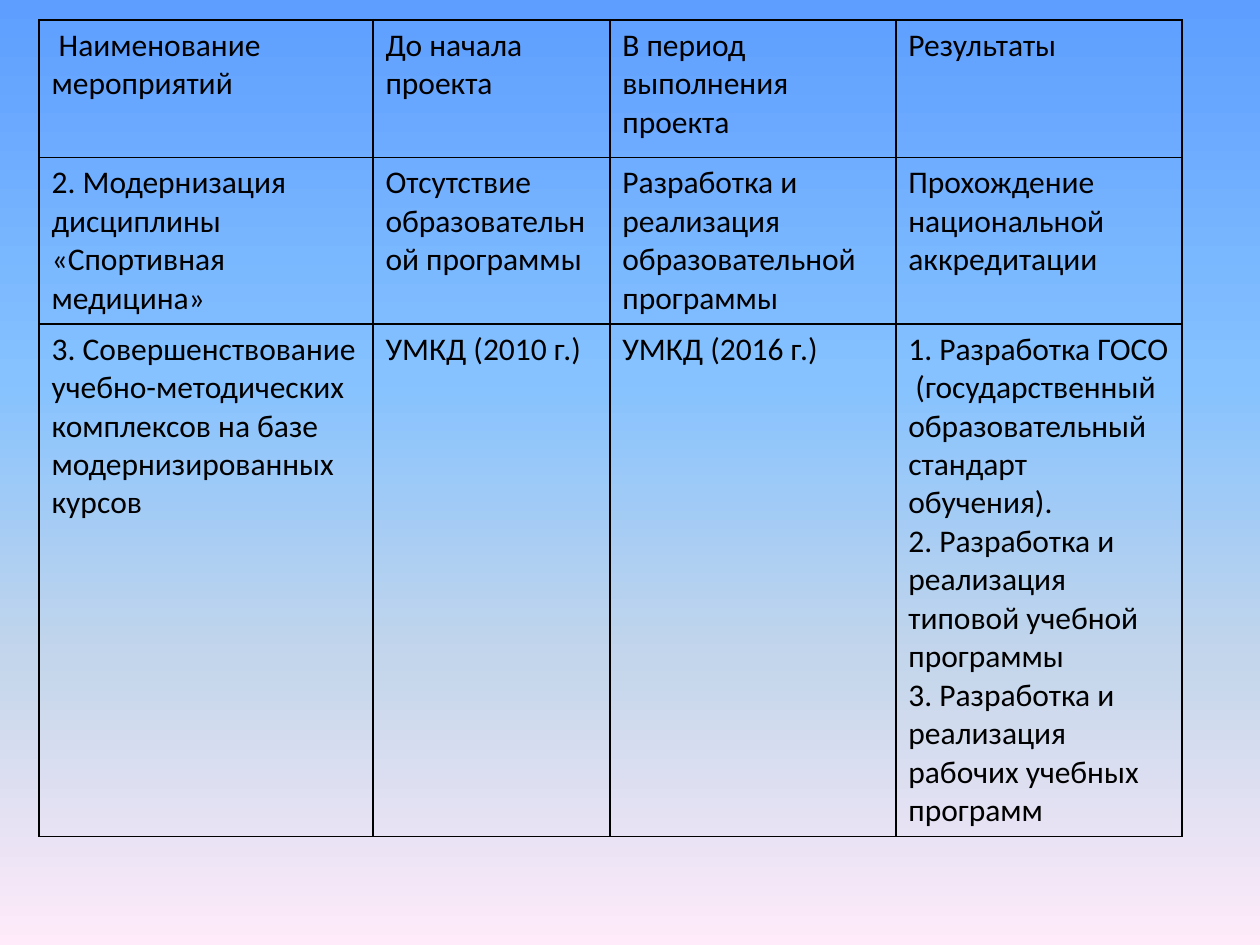
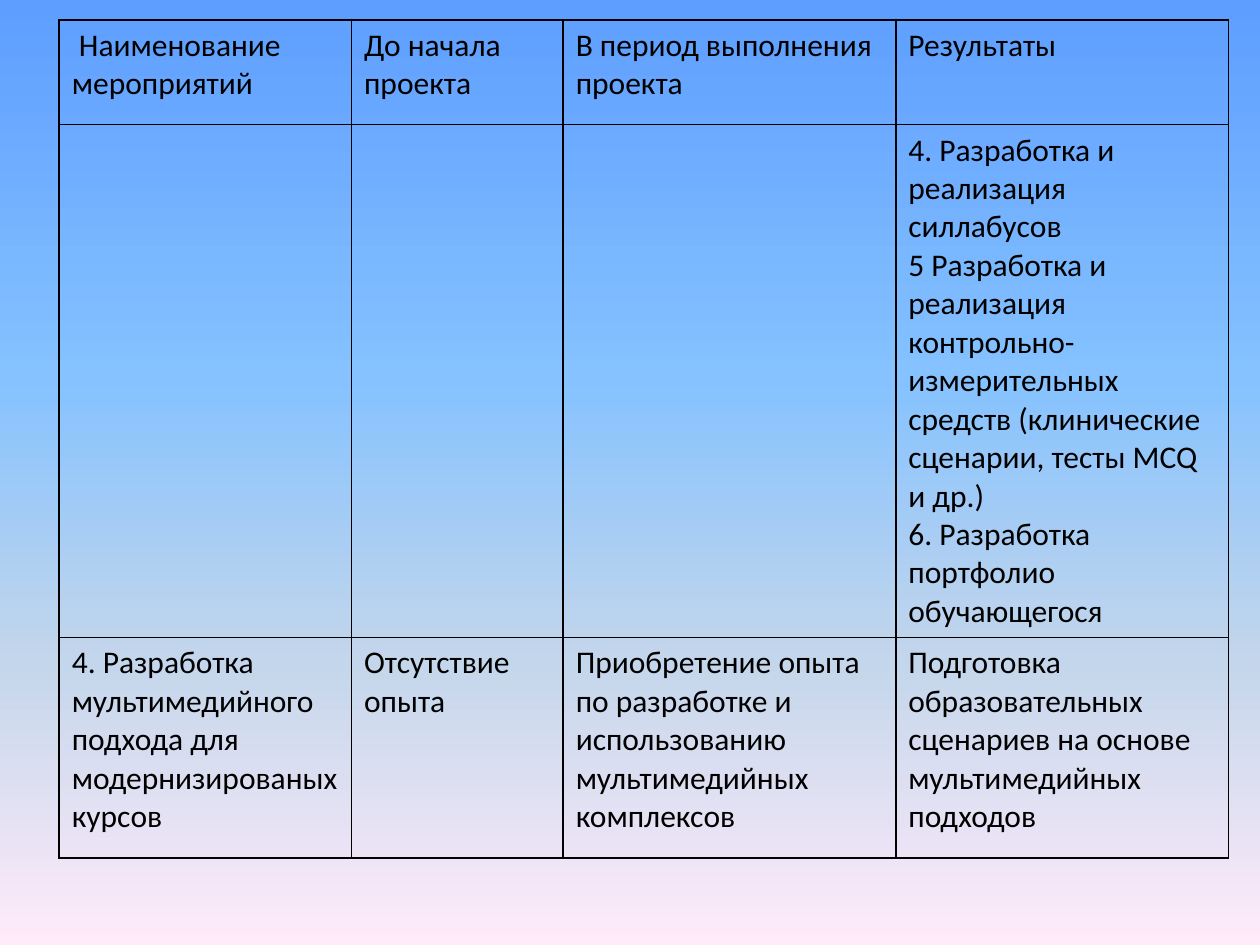
import pptx
import pptx.dml.color
import pptx.oxml
import pptx.oxml.ns
import pptx.util
from pptx.util import Inches

INK = pptx.dml.color.RGBColor(0x00, 0x00, 0x00)
SKY = [
    (0, pptx.dml.color.RGBColor(0x5E, 0x9E, 0xFF)),
    (40, pptx.dml.color.RGBColor(0x85, 0xC2, 0xFF)),
    (70, pptx.dml.color.RGBColor(0xC4, 0xD6, 0xEB)),
    (100, pptx.dml.color.RGBColor(0xFF, 0xEB, 0xFA)),
]
FONT = "Calibri"
TEXT_SIZE = pptx.util.Pt(18)
BORDER = pptx.util.Pt(1)
TABLE_TOP = 0.16
NS = pptx.oxml.ns.nsdecls("a")

HEADINGS = [" Наименование мероприятий", "До начала проекта",
            "В период выполнения проекта", "Результаты"]

# Each slide: left edge, column widths, row heights, rows below the headings
PROJECT_STAGES = [
    (0.31, [2.65, 1.88, 2.27, 2.27], [1.09, 1.32, 4.07], [
        ["2. Модернизация дисциплины «Спортивная медицина»",
         "Отсутствие образовательной программы",
         "Разработка и реализация образовательной программы",
         "Прохождение национальной аккредитации"],
        ["3. Совершенствование учебно-методических комплексов на базе "
         "модернизированных курсов",
         "УМКД (2010 г.)",
         "УМКД (2016 г.)",
         "1. Разработка ГОСО  (государственный образовательный стандарт обучения).\n"
         "2. Разработка и реализация типовой учебной программы\n"
         "3. Разработка и реализация рабочих учебных программ"],
    ]),
    (0.47, [2.32, 1.68, 2.64, 2.64], [0.83, 4.07, 1.75], [
        ["", "", "",
         "4. Разработка и реализация силлабусов\n"
         "5 Разработка и реализация контрольно-измерительных средств "
         "(клинические сценарии, тесты MCQ и др.)\n"
         "6. Разработка портфолио обучающегося"],
        ["4. Разработка мультимедийного подхода для модернизированых курсов",
         "Отсутствие опыта",
         "Приобретение опыта по разработке и использованию мультимедийных комплексов",
         "Подготовка образовательных сценариев на основе мультимедийных подходов"],
    ]),
]


def fill_cell(cell, text):
    """Write the text of a transparent cell with thin lines on all sides."""
    cell.text_frame.text = text
    for paragraph in cell.text_frame.paragraphs:
        paragraph.font.size = TEXT_SIZE
        for run in paragraph.runs:
            run.font.name = FONT
            run.font.size = TEXT_SIZE
            run.font.color.rgb = INK
    cell.fill.background()
    properties = cell._tc.get_or_add_tcPr()
    for position, side in enumerate(["lnL", "lnR", "lnT", "lnB"]):
        properties.insert(position, pptx.oxml.parse_xml(
            f'<a:{side} {NS} w="{BORDER}"><a:solidFill><a:srgbClr val="{INK}"/>'
            f'</a:solidFill></a:{side}>'))


presentation = pptx.Presentation()
presentation.slide_width = Inches(10)
presentation.slide_height = Inches(7.5)

# Shared background: vertical gradient on the master
master = presentation.slide_master
master.background.fill.gradient()
gradient = master.element.find(".//" + pptx.oxml.ns.qn("a:gradFill"))
stops = gradient.find(pptx.oxml.ns.qn("a:gsLst"))
for stop in list(stops):
    stops.remove(stop)
for percent, colour in SKY:
    stops.append(pptx.oxml.parse_xml(
        f'<a:gs {NS} pos="{percent * 1000}"><a:srgbClr val="{colour}"/></a:gs>'))
gradient.find(pptx.oxml.ns.qn("a:lin")).set("ang", str(90 * 60000))

# One table of project stages per slide
for left, widths, heights, activities in PROJECT_STAGES:
    slide = presentation.slides.add_slide(presentation.slide_layouts[6])
    stages = slide.shapes.add_table(
        len(heights), len(widths), Inches(left), Inches(TABLE_TOP),
        Inches(sum(widths)), Inches(sum(heights))).table
    stages.first_row = False
    stages.horz_banding = False
    for column, width in zip(stages.columns, widths):
        column.width = Inches(width)
    for row, height, texts in zip(stages.rows, heights, [HEADINGS] + activities):
        row.height = Inches(height)
        for cell, text in zip(row.cells, texts):
            fill_cell(cell, text)

presentation.save("out.pptx")
